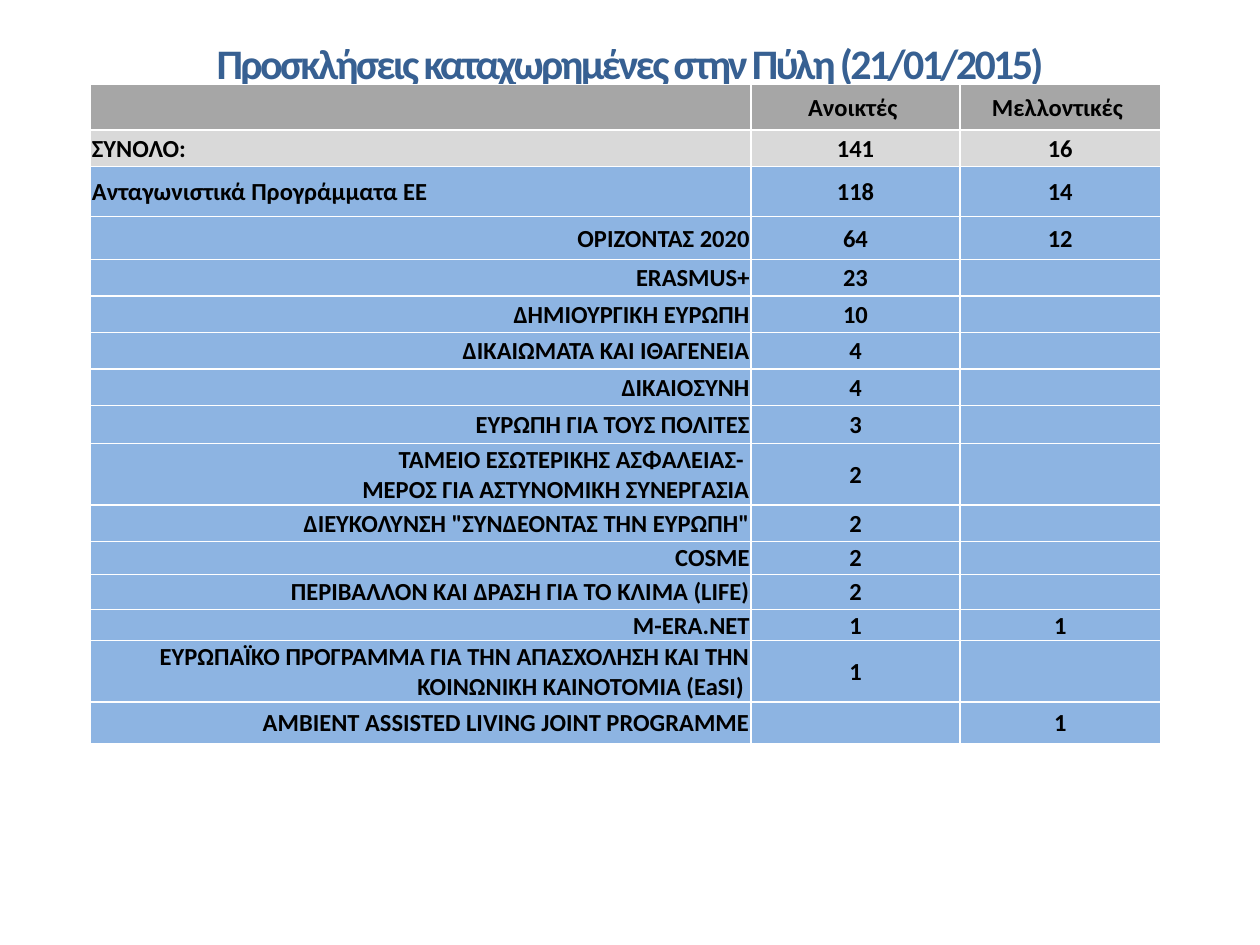
from typing import NamedTuple

from lxml.etree import SubElement
from pptx import Presentation
from pptx.dml.color import RGBColor
from pptx.enum.text import MSO_ANCHOR, PP_ALIGN
from pptx.oxml.ns import qn
from pptx.util import Inches, Pt

FONT = "Calibri"
WHITE, BLACK, NAVY = "FFFFFF", "000000", "376092"
HEADER_GREY, TOTAL_GREY, PROGRAMME_BLUE = "A6A6A6", "D9D9D9", "8DB4E2"
COLUMN_WIDTHS = (5.24, 1.66, 1.59)
BODY_SIZE = 14


class CallRow(NamedTuple):
    """One line of the calls table."""

    programme: str
    open_calls: str
    future_calls: str = ""
    height: float = 0.29
    fill: str = PROGRAMME_BLUE
    align: PP_ALIGN = PP_ALIGN.RIGHT


CALL_ROWS = (
    CallRow("", "Ανοικτές ", "Μελλοντικές ", 0.36, HEADER_GREY),
    CallRow("ΣΥΝΟΛΟ:", "141", "16", 0.29, TOTAL_GREY, PP_ALIGN.LEFT),
    CallRow("Ανταγωνιστικά Προγράμματα ΕΕ", "118", "14", 0.4, align=PP_ALIGN.LEFT),
    CallRow("ΟΡΙΖΟΝΤΑΣ 2020", "64", "12", 0.34),
    CallRow("ERASMUS+", "23"),
    CallRow("ΔΗΜΙΟΥΡΓΙΚΗ ΕΥΡΩΠΗ", "10"),
    CallRow("ΔΙΚΑΙΩΜΑΤΑ ΚΑΙ ΙΘΑΓΕΝΕΙΑ", "4"),
    CallRow("ΔΙΚΑΙΟΣΥΝΗ", "4"),
    CallRow("ΕΥΡΩΠΗ ΓΙΑ ΤΟΥΣ ΠΟΛΙΤΕΣ", "3", height=0.3),
    CallRow("ΤΑΜΕΙΟ ΕΣΩΤΕΡΙΚΗΣ ΑΣΦΑΛΕΙΑΣ- \nΜΕΡΟΣ ΓΙΑ ΑΣΤΥΝΟΜΙΚΗ ΣΥΝΕΡΓΑΣΙΑ", "2", height=0.49),
    CallRow('ΔΙΕΥΚΟΛΥΝΣΗ "ΣΥΝΔΕΟΝΤΑΣ ΤΗΝ ΕΥΡΩΠΗ"', "2"),
    CallRow("COSME", "2", height=0.26),
    CallRow("ΠΕΡΙΒΑΛΛΟΝ ΚΑΙ ΔΡΑΣΗ ΓΙΑ ΤΟ ΚΛΙΜΑ (LIFE)", "2", height=0.28),
    CallRow("M-ERA.NET", "1", "1", 0.24),
    CallRow(
        "ΕΥΡΩΠΑΪΚΟ ΠΡΟΓΡΑΜΜΑ ΓΙΑ ΤΗΝ ΑΠΑΣΧΟΛΗΣΗ ΚΑΙ ΤΗΝ ΚΟΙΝΩΝΙΚΗ ΚΑΙΝΟΤΟΜΙΑ (EaSI) ",
        "1",
        height=0.49,
    ),
    CallRow("AMBIENT ASSISTED LIVING JOINT PROGRAMME", "", "1", 0.33),
)


def rgb(value: str) -> RGBColor:
    """Turn a hex string into a colour."""
    return RGBColor.from_string(value)


def add_run(paragraph, text: str, size: float, color: str):
    """Append a bold run to a paragraph."""
    run = paragraph.add_run()
    run.text = text
    run.font.name = FONT
    run.font.size = Pt(size)
    run.font.bold = True
    run.font.color.rgb = rgb(color)
    return run


def add_border(cell, side: str, width: float) -> None:
    """Draw one white edge of a cell."""
    edge = SubElement(cell._tc.get_or_add_tcPr(), qn(f"a:ln{side}"), w=str(Pt(width)))
    SubElement(SubElement(edge, qn("a:solidFill")), qn("a:srgbClr"), val=WHITE)


def fill_cell(cell, text: str, align: PP_ALIGN, fill: str, top: float, bottom: float) -> None:
    """Set the borders, fill and text of a cell."""
    for side, width in (("L", 1), ("R", 1), ("T", top), ("B", bottom)):
        add_border(cell, side, width)
    cell.fill.solid()
    cell.fill.fore_color.rgb = rgb(fill)
    cell.vertical_anchor = MSO_ANCHOR.MIDDLE
    cell.margin_left = cell.margin_right = cell.margin_top = Inches(0.01)
    cell.margin_bottom = Inches(0)
    frame = cell.text_frame
    for index, line in enumerate(text.split("\n")):
        paragraph = frame.add_paragraph() if index else frame.paragraphs[0]
        paragraph.alignment = align
        if line:
            add_run(paragraph, line, BODY_SIZE, BLACK)
        else:
            SubElement(paragraph._p, qn("a:endParaRPr"), sz=str(BODY_SIZE * 100))


def add_title(slide) -> None:
    """Add the slide heading."""
    heading = slide.shapes.add_textbox(Inches(0.5), Inches(0.23), Inches(9), Inches(0.63))
    frame = heading.text_frame
    frame.word_wrap = True
    frame.margin_top = Inches(0.07)
    paragraph = frame.paragraphs[0]
    paragraph.alignment = PP_ALIGN.CENTER
    run = add_run(paragraph, "Προσκλήσεις καταχωρημένες στην Πύλη (21/01/2015)", 24, NAVY)
    run.font._element.set("spc", "-150")


def add_calls_table(slide) -> None:
    """Add the table of open and future calls."""
    table = slide.shapes.add_table(
        len(CALL_ROWS),
        len(COLUMN_WIDTHS),
        Inches(0.72),
        Inches(0.67),
        Inches(sum(COLUMN_WIDTHS)),
        Inches(sum(row.height for row in CALL_ROWS)),
    ).table
    for column, width in zip(table.columns, COLUMN_WIDTHS):
        column.width = Inches(width)
    for index, (row, call) in enumerate(zip(table.rows, CALL_ROWS)):
        row.height = Inches(call.height)
        top = 1.5 if index == 1 else 1
        bottom = 1.5 if index == 0 else 1
        texts = (call.programme, call.open_calls, call.future_calls)
        aligns = (call.align, PP_ALIGN.CENTER, PP_ALIGN.CENTER)
        for cell, text, align in zip(row.cells, texts, aligns):
            fill_cell(cell, text, align, call.fill, top, bottom)


def main() -> None:
    """Build and save the slide."""
    presentation = Presentation()
    presentation.slide_width = Inches(10)
    presentation.slide_height = Inches(7.5)
    slide = presentation.slides.add_slide(presentation.slide_layouts[6])
    add_title(slide)
    add_calls_table(slide)
    presentation.save("out.pptx")


if __name__ == "__main__":
    main()
